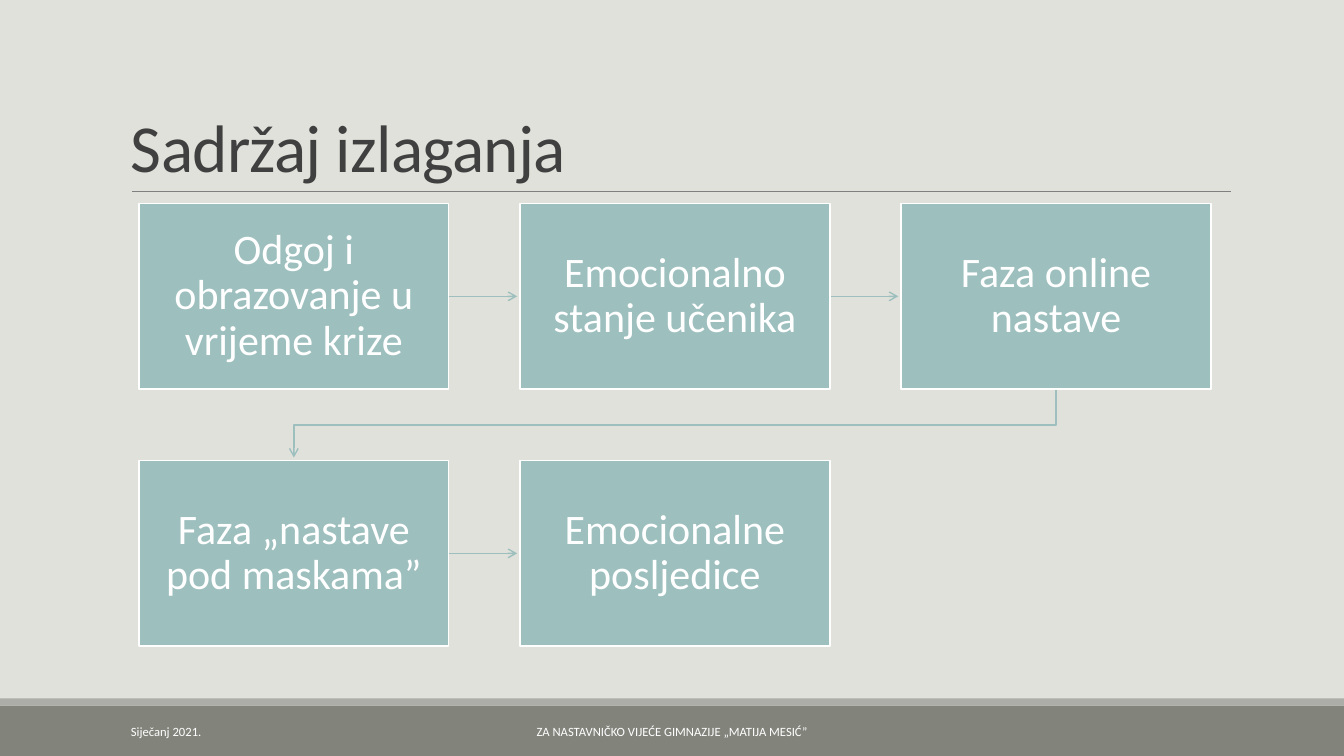
from dataclasses import dataclass

import pptx
import pptx.dml.color
import pptx.enum.shapes
import pptx.enum.text
import pptx.oxml
import pptx.oxml.ns
import pptx.util

Inches = pptx.util.Inches
Pt = pptx.util.Pt
ALIGN = pptx.enum.text.PP_ALIGN
ANCHOR = pptx.enum.text.MSO_ANCHOR
RECT = pptx.enum.shapes.MSO_SHAPE.RECTANGLE
STRAIGHT = pptx.enum.shapes.MSO_CONNECTOR.STRAIGHT

WHITE, TEAL = "FFFFFF", "9DBFBE"
LEFT, TOP = 1.38, 2.02
WIDTH, HEIGHT = 3.07, 1.84
STEP, DROP = 3.78, 2.55
GAP = 0.03  # between an arrowhead and its box


@dataclass
class Topic:
    text: str
    col: int
    row: int

    @property
    def x(self) -> float:
        return LEFT + self.col * STEP

    @property
    def y(self) -> float:
        return TOP + self.row * DROP


@dataclass
class Label:
    text: str
    x: float
    y: float
    width: float
    height: float
    size: float
    color: str
    align: ALIGN = ALIGN.LEFT
    anchor: ANCHOR = ANCHOR.MIDDLE
    lead: float = 1.0
    track: int = 0  # hundredths of a point


TOPICS = [
    Topic("Odgoj i obrazovanje u vrijeme krize", 0, 0),
    Topic("Emocionalno stanje učenika", 1, 0),
    Topic("Faza online nastave", 2, 0),
    Topic("Faza „nastave pod maskama”", 0, 1),
    Topic("Emocionalne posljedice", 1, 1),
]
LABELS = [
    Label("Sadržaj izlaganja", 1.2, 0.31, 11, 1.59, 48, "404040",
          anchor=ANCHOR.BOTTOM, lead=0.85, track=-50),
    Label("Siječanj 2021.", 1.2, 7.06, 2.7, 0.4, 9, WHITE),
    Label("ZA NASTAVNIČKO VIJEĆE GIMNAZIJE „MATIJA MESIĆ”",
          4.03, 7.06, 5.27, 0.4, 9, WHITE, align=ALIGN.CENTER),
]


def rgb(code: str) -> pptx.dml.color.RGBColor:
    return pptx.dml.color.RGBColor.from_string(code)


def write(frame, text: str, size: float, color: str, align: ALIGN,
          anchor: ANCHOR, lead: float):
    frame.word_wrap = True
    frame.vertical_anchor = anchor
    para = frame.paragraphs[0]
    para.alignment = align
    para.line_spacing = lead
    run = para.add_run()
    run.text = text
    run.font.name = "Calibri"
    run.font.size = Pt(size)
    run.font.color.rgb = rgb(color)
    return run


def add_rect(slide, x: float, y: float, width: float, height: float, fill: str):
    rect = slide.shapes.add_shape(
        RECT, Inches(x), Inches(y), Inches(width), Inches(height))
    rect.shadow.inherit = False
    rect.fill.solid()
    rect.fill.fore_color.rgb = rgb(fill)
    rect.line.fill.background()
    return rect


def add_label(slide, label: Label) -> None:
    box = slide.shapes.add_textbox(Inches(label.x), Inches(label.y),
                                   Inches(label.width), Inches(label.height))
    run = write(box.text_frame, label.text, label.size, label.color,
                label.align, label.anchor, label.lead)
    if label.track:
        run.font._element.set("spc", str(label.track))


def add_topic(slide, topic: Topic) -> None:
    box = add_rect(slide, topic.x, topic.y, WIDTH, HEIGHT, TEAL)
    box.line.color.rgb = rgb(WHITE)
    box.line.width = Pt(1.25)
    frame = box.text_frame
    frame.margin_left = frame.margin_right = Inches(0.23)
    frame.margin_top = frame.margin_bottom = Inches(0.23)
    write(frame, topic.text, 30, WHITE, ALIGN.CENTER, ANCHOR.MIDDLE, 0.9)


def add_line(slide, x1: float, y1: float, x2: float, y2: float,
             color: str, width: float):
    line = slide.shapes.add_connector(
        STRAIGHT, Inches(x1), Inches(y1), Inches(x2), Inches(y2))
    line.line.color.rgb = rgb(color)
    line.line.width = Pt(width)
    props = line._element.spPr
    props.append(pptx.oxml.parse_xml(
        "<a:effectLst %s/>" % pptx.oxml.ns.nsdecls("a")))
    return line


def add_head(shape) -> None:
    stroke = shape._element.spPr.find(pptx.oxml.ns.qn("a:ln"))
    stroke.append(pptx.oxml.parse_xml(
        '<a:tailEnd %s type="arrow"/>' % pptx.oxml.ns.nsdecls("a")))


def add_bend(slide, start: Topic, end: Topic) -> None:
    x1, x2 = start.x + WIDTH / 2, end.x + WIDTH / 2
    y1, y2 = start.y + HEIGHT, end.y
    mid = (y1 + y2) / 2
    turns = [(x1, mid), (x2, mid), (x2, y2 - GAP)]
    route = slide.shapes.build_freeform(Inches(x1), Inches(y1))
    route.add_line_segments(
        [(Inches(x), Inches(y)) for x, y in turns], close=False)
    bend = route.convert_to_shape()
    bend.shadow.inherit = False
    bend.fill.background()
    bend.line.color.rgb = rgb(TEAL)
    bend.line.width = Pt(1)
    add_head(bend)


def link(slide, start: Topic, end: Topic) -> None:
    if start.row != end.row:
        add_bend(slide, start, end)
        return
    y = start.y + HEIGHT / 2
    add_head(add_line(slide, start.x + WIDTH, y, end.x - GAP, y, TEAL, 1))


def main() -> None:
    deck = pptx.Presentation()
    deck.slide_width, deck.slide_height = Inches(13.33), Inches(7.5)
    slide = deck.slides.add_slide(deck.slide_layouts[6])

    # Background, footer bands and title rule
    slide.background.fill.solid()
    slide.background.fill.fore_color.rgb = rgb("E1E1DB")
    add_rect(slide, 0, 7, 13.33, 0.5, "82847C")
    add_rect(slide, 0, 6.93, 13.33, 0.07, "ACADA8")
    add_line(slide, 1.31, 1.9, 12.21, 1.9, "808080", 0.5)

    # Flow of topics
    for start, end in zip(TOPICS, TOPICS[1:]):
        link(slide, start, end)
    for topic in TOPICS:
        add_topic(slide, topic)

    # Title and footer
    for label in LABELS:
        add_label(slide, label)

    deck.save("out.pptx")


if __name__ == "__main__":
    main()
